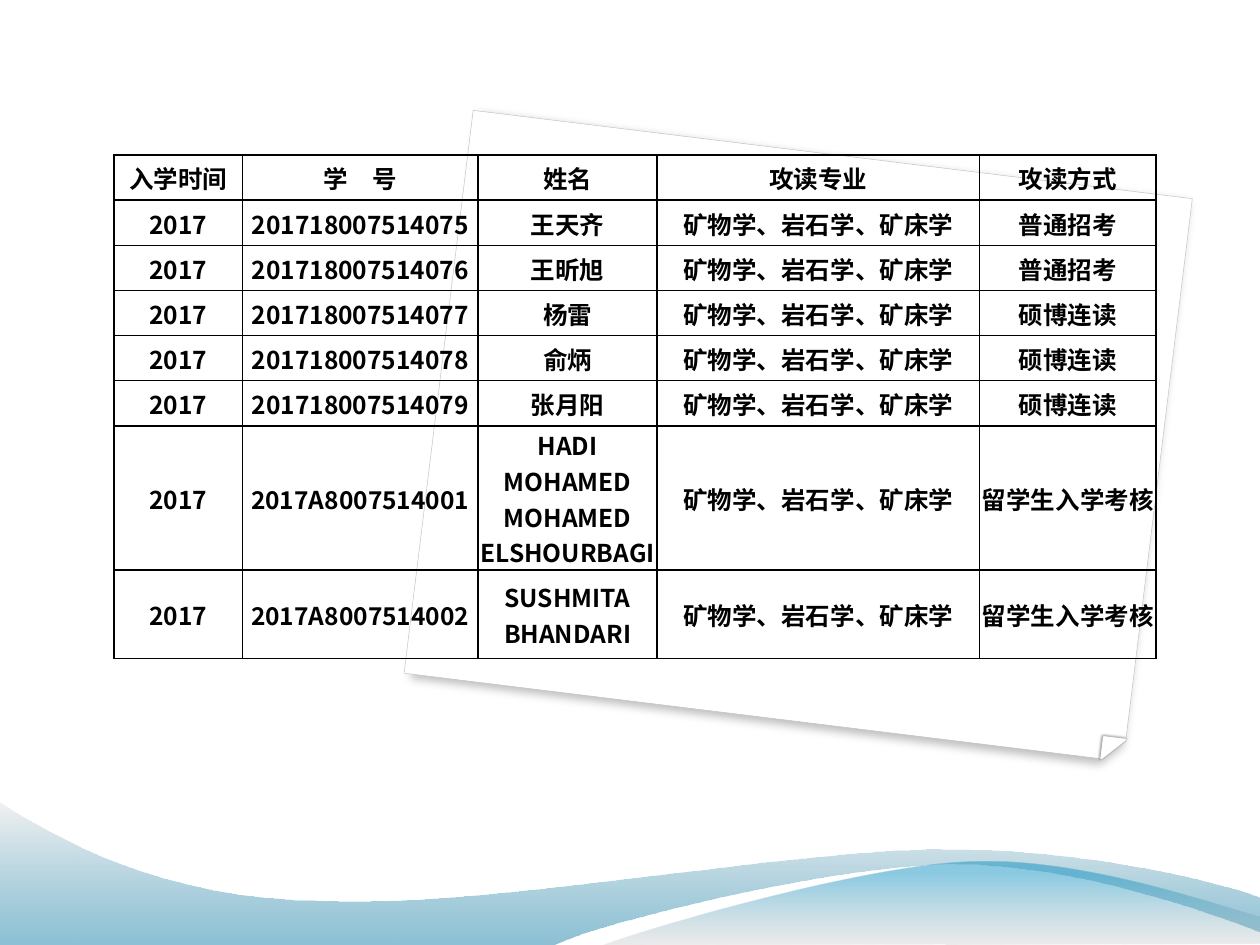
from collections import namedtuple

from lxml import etree
from pptx import Presentation
from pptx.dml.color import RGBColor
from pptx.enum.shapes import MSO_SHAPE
from pptx.enum.text import MSO_ANCHOR, PP_ALIGN
from pptx.oxml.ns import qn
from pptx.util import Emu, Inches, Pt

SNIPPED, CORNER = MSO_SHAPE.SNIP_ROUND_RECTANGLE, MSO_SHAPE.RIGHT_TRIANGLE
CENTER, MIDDLE = PP_ALIGN.CENTER, MSO_ANCHOR.MIDDLE
BLACK, WHITE = RGBColor(0, 0, 0), RGBColor(255, 255, 255)
SILVER = RGBColor(0xC0, 0xC0, 0xC0)
DEEP_BLUE, PALE_GREY = RGBColor(0x00, 0x74, 0xA1), RGBColor(0xE7, 0xE7, 0xE7)
BRIGHT_BLUE, MID_GREY = RGBColor(0x00, 0x8B, 0xBF), RGBColor(0xBD, 0xBD, 0xBD)
FONT = "Noto Sans CJK SC"

Box = namedtuple("Box", "left top width height")

MAJOR = "矿物学、岩石学、矿床学"
EXAM, DIRECT, OVERSEAS = "普通招考", "硕博连读", "留学生入学考核"
HEADINGS = ["入学时间", "学　号", "姓名", "攻读专业", "攻读方式"]
STUDENTS = [
    ("201718007514075", "王天齐", EXAM),
    ("201718007514076", "王昕旭", EXAM),
    ("201718007514077", "杨雷", DIRECT),
    ("201718007514078", "俞炳", DIRECT),
    ("201718007514079", "张月阳", DIRECT),
    ("2017A8007514001", "HADI MOHAMED MOHAMED ELSHOURBAGI", OVERSEAS),
    ("2017A8007514002", "SUSHMITA BHANDARI", OVERSEAS),
]
COLUMN_WEIGHTS = [1.02, 1.87, 1.42, 2.56, 1.4]
ROW_WEIGHTS = [9.48] * 6 + [24.52, 18.6]

# Outlines in percent of their box: a pair is a corner, three pairs are a curve.
BACK_WAVE = [
    [(0.1, 100)], [(44, 100)],
    [(47.6, 84.2), (66.4, 43.9), (75.8, 43.9)],
    [(85.3, 43.9), (95.7, 77.2), (99.9, 91.2)],
    [(100, 67.5)],
    [(98.2, 60.5), (86.9, 32.5), (74.6, 33.3)],
    [(62.2, 33.3), (38.2, 74.6), (25.7, 69.3)],
    [(13, 68.4), (4.7, 26.3), (0, 0)],
]
FRONT_WAVE = [
    [(0, 100)],
    [(5.8, 82.9), (39, 10), (55.7, 5.7)],
    [(72.4, 0), (92.5, 52.9), (100, 68.6)],
    [(100, 98.6)],
]


def part(box, left, top, width, height):
    """Return the box covering the given percentages of another box."""
    return Box(Emu(round(box.left + box.width * left / 100)),
               Emu(round(box.top + box.height * top / 100)),
               Emu(round(box.width * width / 100)),
               Emu(round(box.height * height / 100)))


def add_child(parent, tag, **attributes):
    child = etree.SubElement(parent, qn(tag))
    for name, value in attributes.items():
        child.set(name, str(value))
    return child


def add_solid(parent, color, alpha=None):
    """Append an RGB colour element, transparent if alpha (percent) is given."""
    rgb = add_child(parent, "a:srgbClr", val=color)
    if alpha is not None:
        add_child(rgb, "a:alpha", val=alpha * 1000)


def write(frame, text, size=14, color=BLACK, bold=True, align=CENTER):
    para = frame.paragraphs[0]
    para.alignment = align
    span = para.add_run()
    span.text = text
    span.font.size, span.font.bold, span.font.name = Pt(size), bold, FONT
    span.font.color.rgb = color
    add_child(span.font._element, "a:ea", typeface=FONT)


def add_paper(page, box, kind, line, shadow, **skew):
    """Add a tilted white piece of paper; shadow is alpha, blur, distance, angle."""
    paper = page.shapes.add_shape(kind, *box)
    paper.rotation = 7
    paper._element.spPr.find(qn("a:xfrm")).set("flipV", "1")
    paper.fill.solid()
    paper.fill.fore_color.rgb = WHITE
    paper.line.color.rgb, paper.line.width = line[0], Pt(line[1])
    paper.shadow.inherit = False
    alpha, blur, distance, angle = shadow
    effects = paper._element.spPr.find(qn("a:effectLst"))
    outer = add_child(effects, "a:outerShdw", blurRad=Pt(blur), dist=Pt(distance),
                      dir=angle * 60000, algn="tl", rotWithShape=0, **skew)
    add_solid(outer, BLACK, alpha)
    return paper


def add_sheet(page, box):
    """Add the sheet and its curled corner."""
    sheet = add_paper(page, box, SNIPPED, (SILVER, 0.25), (25, 5, 3, 125),
                      sx=98500, sy=100080, kx=100000)
    sheet.adjustments[0], sheet.adjustments[1] = 0, 0.036
    add_paper(page, part(box, 92, 103.33, 2.96, 3.78), CORNER, (WHITE, 1),
              (47, 1.6, 0.5, 215))


def bend(shape, outline):
    """Join each three line steps that stand for a curve into one cubic step."""
    steps = shape._element.spPr.iter(qn("a:lnTo"))
    lines = iter(list(steps))
    for segment in outline[1:]:
        first = next(lines)
        if len(segment) == 3:
            first.tag = qn("a:cubicBezTo")
            for line in (next(lines), next(lines)):
                first.append(line[0])
                line.getparent().remove(line)


def add_wave(page, box, outline, stops):
    """Add a wave whose colour stops (position, colour, alpha) run upwards."""
    points = [part(box, x, y, 0, 0)[:2] for segment in outline for x, y in segment]
    builder = page.shapes.build_freeform(*points[0])
    builder.add_line_segments(points[1:], close=True)
    wave = builder.convert_to_shape()
    path_data = wave._element.spPr.find(".//" + qn("a:path"))
    curves = [segment for segment in outline if len(segment) == 3]
    if curves:
        bend_lines(path_data, outline)
    wave.shadow.inherit = False
    wave.line.fill.background()
    wave.fill.gradient()
    wave.fill.gradient_angle = 90
    for stop, (position, color, _) in zip(wave.fill.gradient_stops, stops):
        stop.position, stop.color.rgb = position, color
    for rgb, (_, _, alpha) in zip(wave._element.spPr.iter(qn("a:srgbClr")), stops):
        add_child(rgb, "a:alpha", val=alpha * 1000)


def bend_lines(outline_element, outline):
    """Replace the line steps by straight and cubic steps of the outline."""
    lines = iter(outline_element.findall(qn("a:lnTo")))
    for segment in outline[1:]:
        group = [next(lines) for _ in segment]
        if len(group) == 3:
            curve = etree.Element(qn("a:cubicBezTo"))
            group[0].addprevious(curve)
            for line in group:
                curve.append(line[0])
                outline_element.remove(line)


def format_cell(cell, text):
    cell.margin_left = cell.margin_right = cell.margin_top = Inches(0.01)
    cell.margin_bottom = 0
    cell.vertical_anchor = MIDDLE
    write(cell.text_frame, text)
    properties = cell._tc.get_or_add_tcPr()
    for side in ("a:lnL", "a:lnR", "a:lnT", "a:lnB"):
        border = add_child(properties, side, w=Pt(1))
        add_solid(add_child(border, "a:solidFill"), BLACK)
    cell.fill.background()


def add_student_table(page, box):
    rows = [HEADINGS] + [["2017", number, name, MAJOR, route]
                         for number, name, route in STUDENTS]
    table = page.shapes.add_table(len(rows), len(HEADINGS), *box).table
    table.first_row = table.horz_banding = False
    for column, weight in zip(table.columns, COLUMN_WEIGHTS):
        column.width = round(box.width * weight / sum(COLUMN_WEIGHTS))
    for row, weight, texts in zip(table.rows, ROW_WEIGHTS, rows):
        row.height = round(box.height * weight / sum(ROW_WEIGHTS))
        for cell, text in zip(row.cells, texts):
            format_cell(cell, text)


def main():
    deck = Presentation()
    deck.slide_width, deck.slide_height = Inches(10), Inches(7.5)
    page = deck.slides.add_slide(deck.slide_layouts[6])
    page.background.fill.solid()
    page.background.fill.fore_color.rgb = WHITE
    whole = Box(0, 0, deck.slide_width, deck.slide_height)
    add_sheet(page, part(whole, 34.6, 16.13, 57.5, 60))
    add_wave(page, part(whole, -0.1, 84.8, 100.2, 15.2), BACK_WAVE,
             [(0, DEEP_BLUE, 45), (1, PALE_GREY, 55)])
    add_wave(page, part(whole, 47.9, 90.67, 52.1, 9.33), FRONT_WAVE,
             [(0, MID_GREY, 30), (0.8, BRIGHT_BLUE, 45)])
    add_student_table(page, part(whole, 9.06, 16.4, 82.7, 50.4))
    deck.save("out.pptx")


if __name__ == "__main__":
    main()
